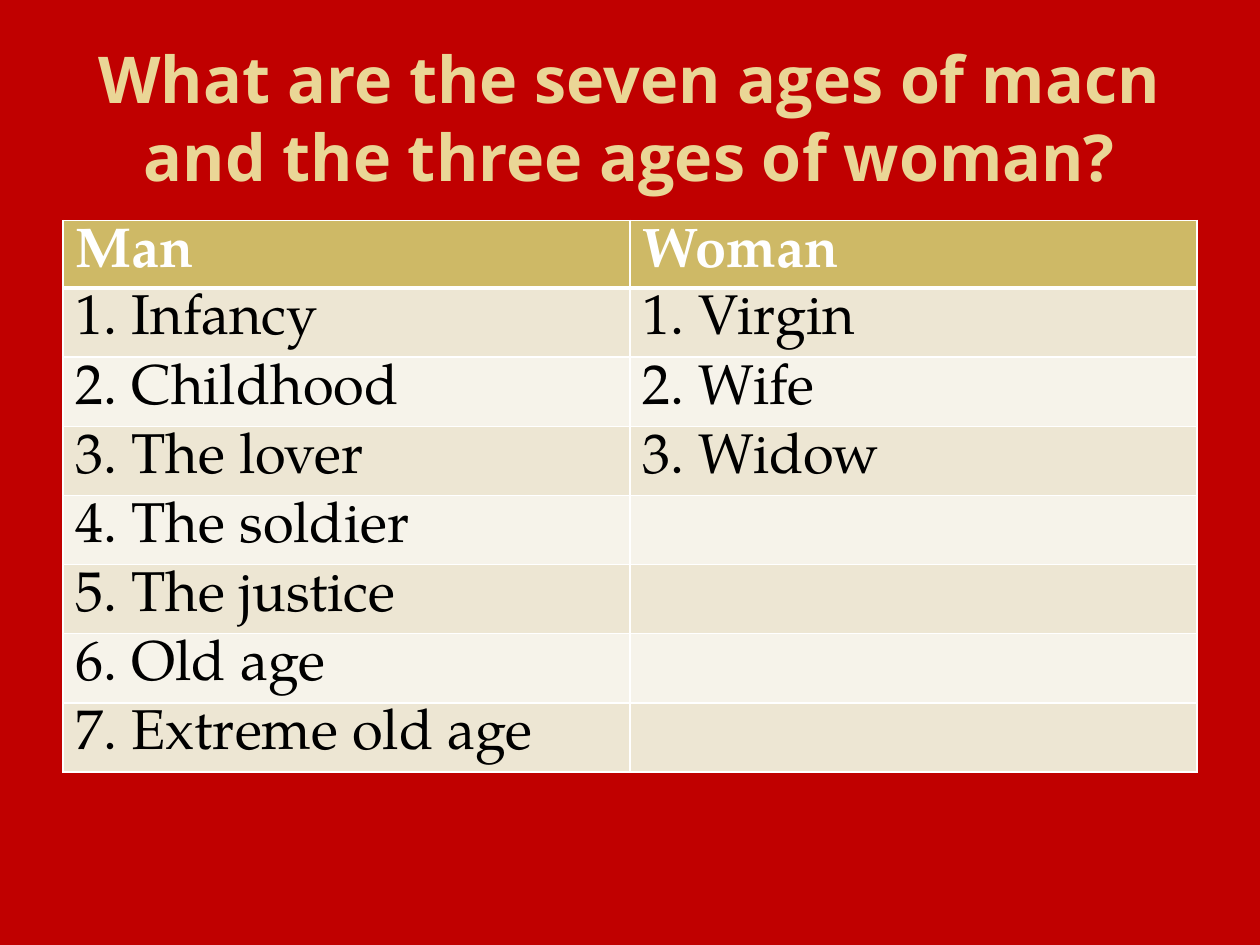
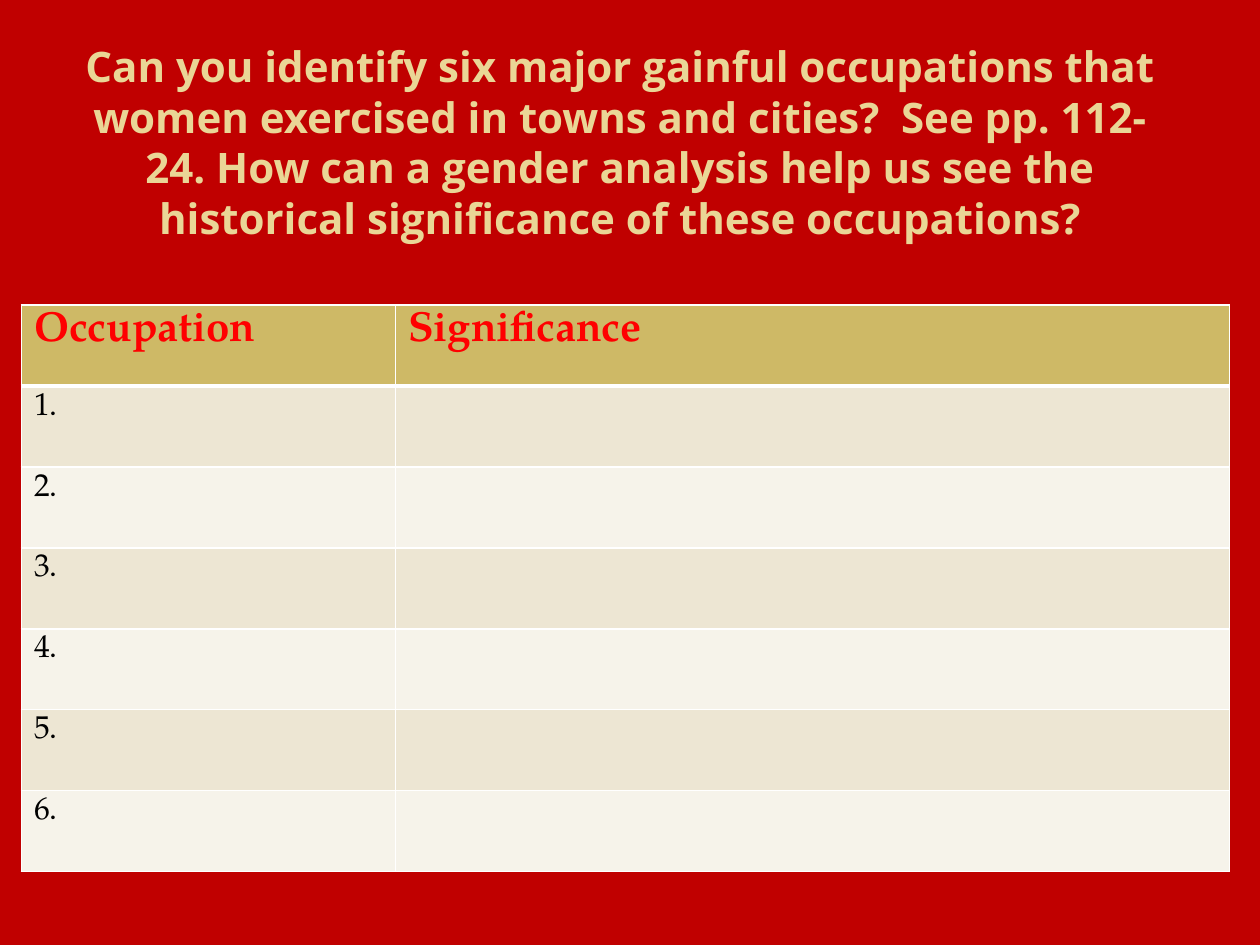
from dataclasses import dataclass

from lxml import etree
from pptx import Presentation
from pptx.dml.color import RGBColor
from pptx.enum.text import MSO_ANCHOR, MSO_AUTO_SIZE, PP_ALIGN
from pptx.oxml.ns import qn
from pptx.util import Inches, Pt

CENTER = PP_ALIGN.CENTER
MIDDLE = MSO_ANCHOR.MIDDLE
NO_AUTOFIT = MSO_AUTO_SIZE.NONE
TITLE_ONLY = 5


@dataclass(frozen=True)
class Theme:
    background: str = "C00000"
    title_stops: tuple = ((0, "EAD696"), (73, "EAD696"), (100, "E7D081"))
    title_angle: int = 80
    header_fill: str = "CEB966"
    band_fills: tuple = ("EDE6D3", "F6F3EA")
    border: str = "FFFFFF"
    white: str = "FFFFFF"
    red: str = "FF0000"
    body_text: str = "000000"
    title_font: str = "Open Sans"
    table_font: str = "TeX Gyre Pagella"
    large_title: float = 36.9
    small_title: float = 24
    large_text: float = 32
    header_text: float = 24
    small_text: float = 18
    thin_line: float = 1
    thick_line: float = 3


THEME = Theme()


@dataclass(frozen=True)
class Box:
    left: float
    top: float
    width: float
    height: float


@dataclass(frozen=True)
class TableSlide:
    title: str
    title_box: Box
    title_size: float
    table_box: Box
    column_widths: tuple
    rows: list
    header_color: str
    header_size: float
    body_size: float


def write_text(frame, text: str, *, font: str, size: float, bold=False,
               color=None, alignment=None):
    """Write one formatted run and return it."""
    paragraph = frame.paragraphs[0]
    paragraph.alignment = alignment
    run = paragraph.add_run()
    run.text = text
    run.font.name = font
    run.font.size = Pt(size)
    run.font.bold = bold
    if color:
        run.font.color.rgb = RGBColor.from_string(color)
    return run


def apply_gradient(run) -> None:
    """Fill the letters of a run with the title gradient."""
    gradient = etree.Element(qn("a:gradFill"))
    stops = etree.SubElement(gradient, qn("a:gsLst"))
    for position, color in THEME.title_stops:
        stop = etree.SubElement(stops, qn("a:gs"), pos=str(position * 1000))
        etree.SubElement(stop, qn("a:srgbClr"), val=color)
    etree.SubElement(gradient, qn("a:lin"), ang=str(THEME.title_angle * 60000))
    run._r.get_or_add_rPr().insert(0, gradient)


def set_borders(cell, top: float, bottom: float) -> None:
    """Draw the four cell borders; the sides are always thin."""
    properties = cell._tc.get_or_add_tcPr()
    widths = {"lnL": THEME.thin_line, "lnR": THEME.thin_line,
              "lnT": top, "lnB": bottom}
    for index, (side, width) in enumerate(widths.items()):
        line = etree.Element(qn(f"a:{side}"), w=str(Pt(width)))
        fill = etree.SubElement(line, qn("a:solidFill"))
        etree.SubElement(fill, qn("a:srgbClr"), val=THEME.border)
        properties.insert(index, line)


def add_title(slide, content: TableSlide) -> None:
    title, box = slide.shapes.title, content.title_box
    title.left, title.top = Inches(box.left), Inches(box.top)
    title.width, title.height = Inches(box.width), Inches(box.height)
    frame = title.text_frame
    frame.word_wrap = True
    frame.auto_size = NO_AUTOFIT
    frame.vertical_anchor = MIDDLE
    run = write_text(frame, content.title, font=THEME.title_font,
                     size=content.title_size, bold=True, alignment=CENTER)
    apply_gradient(run)


def add_table(slide, content: TableSlide) -> None:
    box, rows = content.table_box, content.rows
    table = slide.shapes.add_table(
        len(rows), len(content.column_widths), Inches(box.left),
        Inches(box.top), Inches(box.width), Inches(box.height)).table
    for column, width in zip(table.columns, content.column_widths):
        column.width = Inches(width)
    for row_index, texts in enumerate(rows):
        is_header = row_index == 0
        # The thick rule lies between the header and the first body row
        top = THEME.thick_line if row_index == 1 else THEME.thin_line
        bottom = THEME.thick_line if is_header else THEME.thin_line
        fill = THEME.header_fill if is_header else THEME.band_fills[(row_index - 1) % 2]
        for column_index, text in enumerate(texts):
            cell = table.cell(row_index, column_index)
            cell.fill.solid()
            cell.fill.fore_color.rgb = RGBColor.from_string(fill)
            set_borders(cell, top, bottom)
            if text:
                write_text(
                    cell.text_frame, text, font=THEME.table_font, bold=is_header,
                    size=content.header_size if is_header else content.body_size,
                    color=content.header_color if is_header else THEME.body_text)


# Slide content
MAN_AGES = ["Infancy", "Childhood", "The lover", "The soldier", "The justice",
            "Old age", "Extreme old age"]
WOMAN_AGES = ["Virgin", "Wife", "Widow"]


def numbered(items: list, index: int) -> str:
    return f"{index + 1}. {items[index]}" if index < len(items) else ""


AGES = TableSlide(
    title="What are the seven ages of macn and the three ages of woman?",
    title_box=Box(0.5, 0.3, 9, 1.25),
    title_size=THEME.large_title,
    table_box=Box(0.5, 1.75, 9, 3.28),
    column_widths=(4.5, 4.5),
    rows=[("Man", "Woman")] + [(numbered(MAN_AGES, i), numbered(WOMAN_AGES, i))
                               for i in range(len(MAN_AGES))],
    header_color=THEME.white,
    header_size=THEME.large_text,
    body_size=THEME.large_text,
)

OCCUPATIONS = TableSlide(
    title="Can you identify six major gainful occupations that women exercised "
          "in towns and cities?  See pp. 112-24. How can a gender analysis help "
          "us see the historical significance of these occupations?",
    title_box=Box(0.42, 0.25, 9, 1.75),
    title_size=THEME.small_title,
    table_box=Box(0.17, 2.42, 9.58, 4.5),
    column_widths=(2.97, 6.62),
    rows=[("Occupation", "Significance")] + [(f"{n}.", "") for n in range(1, 7)],
    header_color=THEME.red,
    header_size=THEME.header_text,
    body_size=THEME.small_text,
)


def main() -> None:
    presentation = Presentation()
    presentation.slide_width = Inches(10)
    presentation.slide_height = Inches(7.5)
    # Shared background
    background = presentation.slide_master.background.fill
    background.solid()
    background.fore_color.rgb = RGBColor.from_string(THEME.background)
    for content in (AGES, OCCUPATIONS):
        slide = presentation.slides.add_slide(presentation.slide_layouts[TITLE_ONLY])
        add_title(slide, content)
        add_table(slide, content)
    presentation.save("out.pptx")


if __name__ == "__main__":
    main()
